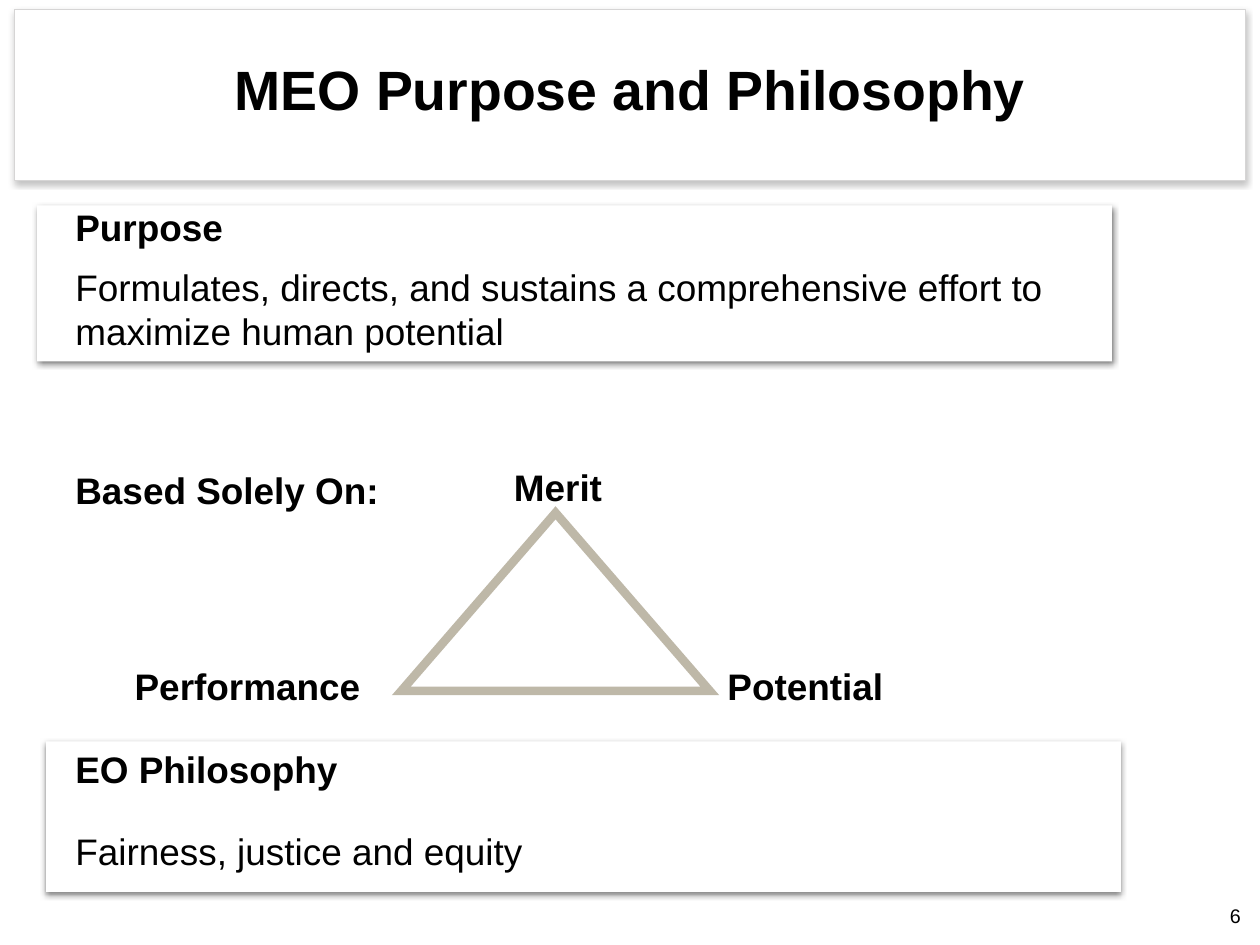
from lxml.etree import SubElement
from pptx import Presentation
from pptx.dml.color import RGBColor
from pptx.enum.shapes import MSO_SHAPE
from pptx.enum.text import MSO_ANCHOR, MSO_AUTO_SIZE, PP_ALIGN
from pptx.oxml.ns import qn
from pptx.util import Inches, Pt


def color(hex_code):
    """Turn a hex string into a colour."""
    return RGBColor.from_string(hex_code)


class SlideBuilder:
    """Draw panels, labels and outlines on one slide in a shared style."""

    FONT = "Arial"
    INK = "000000"
    PAPER = "FFFFFF"
    BODY_SIZE = 30
    INSET = Inches(0.06)

    def __init__(self, slide):
        """Keep the slide to draw on."""
        self.slide = slide

    def panel(self, left, top, width, height, shadow_opacity=50, border=None):
        """Add a white rectangle with a soft shadow below it."""
        panel = self.slide.shapes.add_shape(
            MSO_SHAPE.RECTANGLE, Inches(left), Inches(top), Inches(width), Inches(height))
        panel.fill.solid()
        panel.fill.fore_color.rgb = color(self.PAPER)
        if border:
            panel.line.color.rgb = color(border)
            panel.line.width = Pt(1)
        else:
            panel.line.fill.background()
        panel.shadow.inherit = False
        effects = panel._element.spPr.find(qn("a:effectLst"))
        shadow = SubElement(effects, qn("a:outerShdw"), blurRad=str(Pt(5)),
                            dist=str(Pt(2)), dir="5400000", rotWithShape="0")
        tint = SubElement(shadow, qn("a:srgbClr"), val=self.INK)
        SubElement(tint, qn("a:alpha"), val=str(shadow_opacity * 1000))

    def text(self, content, left, top, width, height, size=BODY_SIZE, bold=False,
             align=PP_ALIGN.LEFT, anchor=MSO_ANCHOR.MIDDLE, wrap=True):
        """Add a text box with one formatted paragraph."""
        box = self.slide.shapes.add_textbox(
            Inches(left), Inches(top), Inches(width), Inches(height))
        frame = box.text_frame
        frame.margin_left = frame.margin_right = self.INSET
        frame.margin_top = frame.margin_bottom = self.INSET
        frame.word_wrap = wrap
        frame.auto_size = MSO_AUTO_SIZE.SHAPE_TO_FIT_TEXT
        frame.vertical_anchor = anchor
        paragraph = frame.paragraphs[0]
        paragraph.alignment = align
        run = paragraph.add_run()
        run.text = content
        run.font.name = self.FONT
        run.font.size = Pt(size)
        run.font.bold = bold
        run.font.color.rgb = color(self.INK)

    def outline(self, corners, stroke, weight):
        """Add an unfilled closed polygon with sharp corners."""
        points = [(Inches(x), Inches(y)) for x, y in corners]
        builder = self.slide.shapes.build_freeform(*points[0])
        builder.add_line_segments(points[1:], close=True)
        polygon = builder.convert_to_shape()
        polygon.fill.background()
        polygon.line.color.rgb = color(stroke)
        polygon.line.width = Pt(weight)
        polygon.shadow.inherit = False
        SubElement(polygon.line._get_or_add_ln(), qn("a:miter"), lim="800000")


def main():
    """Build the purpose and philosophy slide."""
    deck = Presentation()
    deck.slide_width, deck.slide_height = Inches(14.22), Inches(10.67)
    page = SlideBuilder(deck.slides.add_slide(deck.slide_layouts[6]))

    page.panel(0.52, 8.37, 12.13, 1.7)
    page.panel(0.42, 2.32, 12.13, 1.76)
    page.panel(0.16, 0.11, 13.9, 1.93, shadow_opacity=23, border="D6D5D5")

    page.text("MEO Purpose and Philosophy", 2.55, 0.56, 9.12, 0.87, size=45,
              bold=True, align=PP_ALIGN.CENTER, wrap=False)

    for heading, top in (("Purpose", 2.26), ("Based Solely On:", 5.22),
                         ("EO Philosophy", 8.37)):
        page.text(heading, 0.79, top, 8.32, 0.61, bold=True)

    for statement, top, height in (
            ("Formulates, directs, and sustains a comprehensive effort to "
             "maximize human potential", 2.93, 1.11),
            ("Fairness, justice and equity", 9.29, 0.62)):
        page.text(statement, 0.79, top, 11.99, height)

    page.outline([(6.27, 5.79), (8.01, 7.8), (4.53, 7.8)], "BEB8A8", 7)
    for corner, left, top, width in (("Merit", 5.74, 5.19, 1.12),
                                     ("Performance", 1.46, 7.43, 2.68),
                                     ("Potential", 8.15, 7.43, 1.89)):
        page.text(corner, left, top, width, 0.62, bold=True, wrap=False)

    page.text("6", 13.82, 10.14, 0.24, 0.38, size=16, align=PP_ALIGN.CENTER,
              anchor=MSO_ANCHOR.TOP, wrap=False)

    deck.save("out.pptx")


if __name__ == "__main__":
    main()
